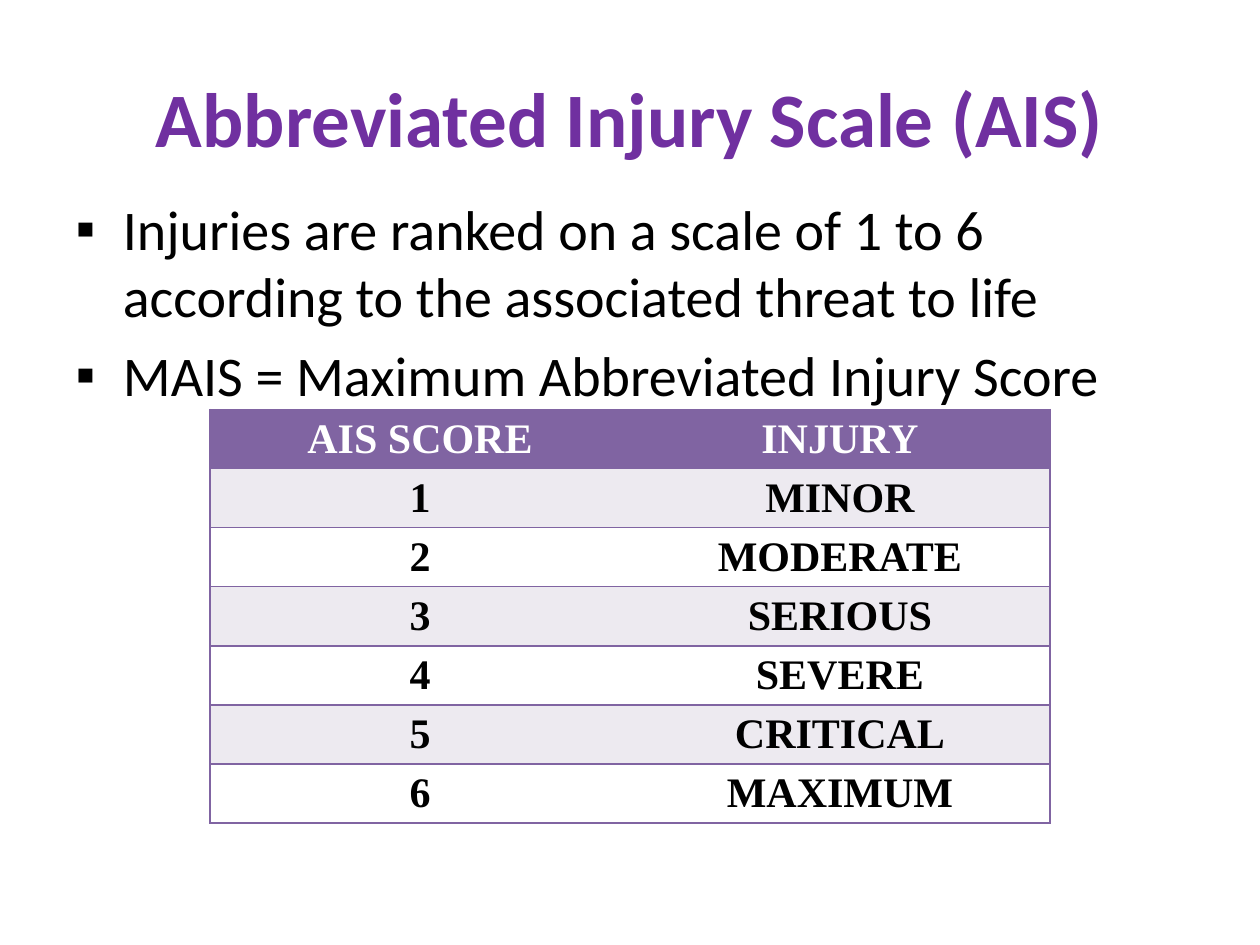
from dataclasses import dataclass

from lxml import etree
from pptx import Presentation
from pptx import util as u
from pptx.dml.color import RGBColor
from pptx.enum import text
from pptx.oxml.ns import qn

COLORS = {
    "title": "7030A0",
    "text": "000000",
    "accent": "8064A2",
    "band": "EDEAF0",
    "white": "FFFFFF",
}


@dataclass(frozen=True)
class Box:
    left: float
    top: float
    width: float
    height: float


@dataclass(frozen=True)
class TextStyle:
    font: str
    size: float
    color: str
    bold: bool = False


@dataclass(frozen=True)
class Row:
    score: str
    injury: str


TITLE_STYLE = TextStyle("Calibri", 44, "title", True)
BODY_STYLE = TextStyle("Calibri", 32, "text")
HEADER_STYLE = TextStyle("Times New Roman", 24, "white", True)
CELL_STYLE = TextStyle("Times New Roman", 24, "text", True)

BULLETS = [
    "Injuries are ranked on a scale of 1 to 6 according to the associated threat to life",
    "MAIS = Maximum Abbreviated Injury Score",
]
SEVERITIES = ["MINOR", "MODERATE", "SERIOUS", "SEVERE", "CRITICAL", "MAXIMUM"]
ROWS = [Row("AIS SCORE", "INJURY")] + [
    Row(str(score), injury) for score, injury in enumerate(SEVERITIES, start=1)
]
ROW_HEIGHT = 29.5
BULLET_INDENT = 27


def place(shape, box: Box) -> None:
    shape.left, shape.top = u.Pt(box.left), u.Pt(box.top)
    shape.width, shape.height = u.Pt(box.width), u.Pt(box.height)


def add_run(paragraph, wording: str, style: TextStyle) -> None:
    run = paragraph.add_run()
    run.text = wording
    run.font.name = style.font
    run.font.size = u.Pt(style.size)
    run.font.bold = style.bold
    run.font.color.rgb = RGBColor.from_string(COLORS[style.color])


def add_bullet(paragraph, character: str) -> None:
    properties = paragraph._p.get_or_add_pPr()
    properties.set("marL", str(u.Pt(BULLET_INDENT)))
    properties.set("indent", str(u.Pt(-BULLET_INDENT)))
    etree.SubElement(properties, qn("a:buFont"), typeface="Arial")
    etree.SubElement(properties, qn("a:buChar"), char=character)


def set_borders(cell, visible_sides: str) -> None:
    properties = cell._tc.get_or_add_tcPr()
    for side in "LRTB":
        line = etree.SubElement(properties, qn(f"a:ln{side}"), w=str(u.Pt(1)))
        if side in visible_sides:
            fill = etree.SubElement(line, qn("a:solidFill"))
            etree.SubElement(fill, qn("a:srgbClr"), val=COLORS["accent"])
        else:
            etree.SubElement(line, qn("a:noFill"))


def fill_cell(cell, wording: str, style: TextStyle, fill: str, sides: str) -> None:
    set_borders(cell, sides)
    cell.fill.solid()
    cell.fill.fore_color.rgb = RGBColor.from_string(COLORS[fill])
    paragraph = cell.text_frame.paragraphs[0]
    paragraph.alignment = text.PP_ALIGN.CENTER
    add_run(paragraph, wording, style)


def add_score_table(slide, box: Box, rows: list[Row]) -> None:
    frame = slide.shapes.add_table(
        len(rows), 2, u.Pt(box.left), u.Pt(box.top), u.Pt(box.width), u.Pt(box.height)
    )
    table = frame.table
    for index, row in enumerate(rows):
        table.rows[index].height = u.Pt(ROW_HEIGHT)
        style = CELL_STYLE if index else HEADER_STYLE
        fill = ("band" if index % 2 else "white") if index else "accent"
        fill_cell(table.cell(index, 0), row.score, style, fill, "LTB")
        fill_cell(table.cell(index, 1), row.injury, style, fill, "RTB")


def main() -> None:
    presentation = Presentation()
    presentation.slide_width, presentation.slide_height = u.Pt(720), u.Pt(540)
    slide = presentation.slides.add_slide(presentation.slide_layouts[1])

    # Title
    title = slide.shapes.title
    place(title, Box(36, 21.6, 648, 90))
    title.text_frame.vertical_anchor = text.MSO_ANCHOR.MIDDLE
    paragraph = title.text_frame.paragraphs[0]
    paragraph.alignment = text.PP_ALIGN.CENTER
    add_run(paragraph, "Abbreviated Injury Scale (AIS)", TITLE_STYLE)

    # Bullet list
    body = slide.placeholders[1]
    place(body, Box(36, 107.5, 648, 119.5))
    frame = body.text_frame
    frame.auto_size = text.MSO_AUTO_SIZE.NONE
    for index, wording in enumerate(BULLETS):
        paragraph = frame.add_paragraph() if index else frame.paragraphs[0]
        add_bullet(paragraph, "▪")
        add_run(paragraph, wording, BODY_STYLE)

    # Score table
    add_score_table(slide, Box(120, 234, 480, ROW_HEIGHT * len(ROWS)), ROWS)

    presentation.save("out.pptx")


if __name__ == "__main__":
    main()
